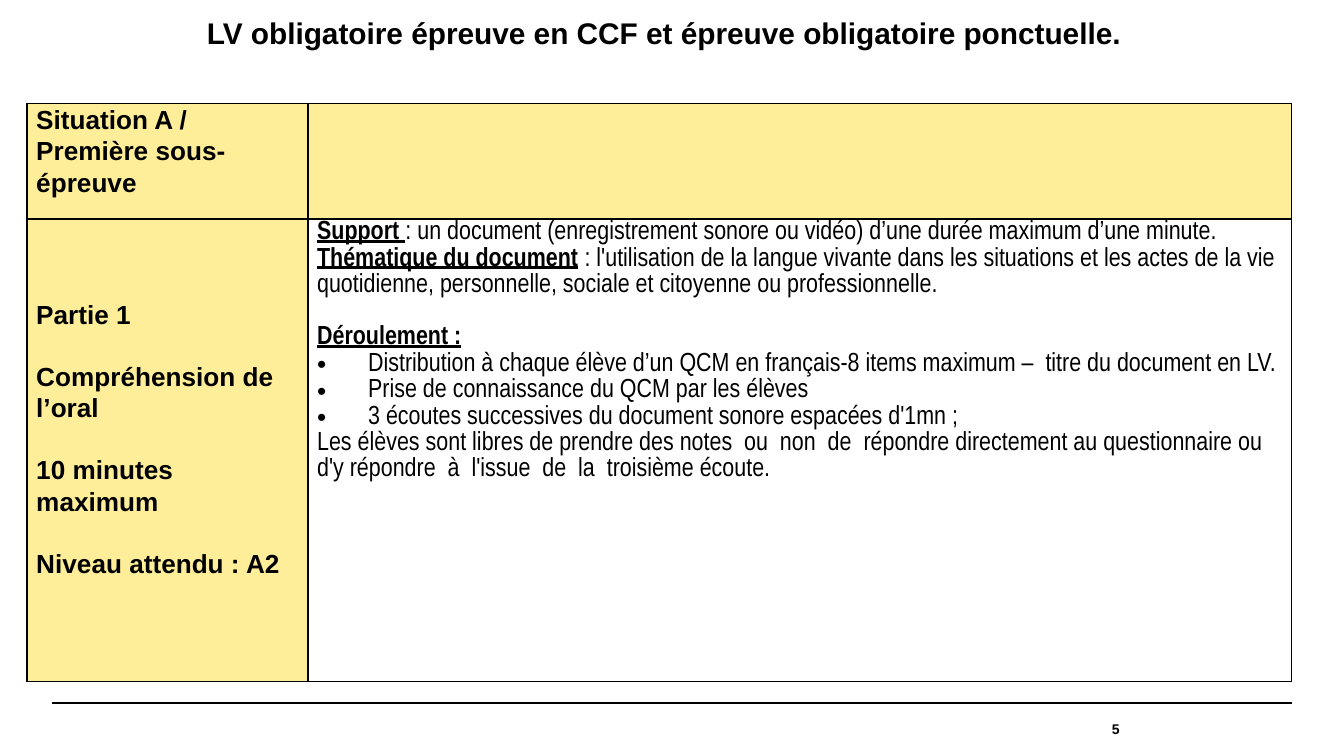
"""Build the slide on the first part of the oral comprehension exam."""
from pptx import Presentation
from pptx.dml.color import RGBColor as Rgb
from pptx.enum.shapes import MSO_CONNECTOR as Conn
from pptx.enum.text import MSO_ANCHOR as Anchor, PP_ALIGN as Align
from pptx.oxml.ns import qn
from pptx.util import Inches, Pt
from lxml.etree import SubElement as Sub

TITLE = "LV obligatoire épreuve en CCF et épreuve obligatoire ponctuelle."
INK, GOLD = "000000", "FFEE99"
WIDE = 10
COLS, ROWS = (2.09, 7.32), (0.86, 3.44)
HEAD = ["Situation A /", "Première sous-épreuve"]
PART = ["Partie 1", "Compréhension de l’oral", "10 minutes maximum", "Niveau attendu : A2"]
BODY = [
    ("Support ", ": un document (enregistrement sonore ou vidéo) d’une durée maximum d’une minute.", "", 0),
    ("Thématique du document", " : l'utilisation de la langue vivante dans les situations et les actes de la vie "
     "quotidienne, personnelle, sociale et citoyenne ou professionnelle.", "", 0),
    ("Déroulement :", "", "", 14),
    ("", "Distribution à chaque élève d’un QCM en français-8 items maximum –  titre du document en LV.", "•", 0),
    ("", "Prise de connaissance du QCM par les élèves", "•", 0),
    ("", "3 écoutes successives du document sonore espacées d'1mn ;", "•", 0),
    ("", "Les élèves sont libres de prendre des notes  ou  non  de  répondre directement au questionnaire ou "
     "d'y répondre  à  l'issue  de  la  troisième écoute.", "", 0),
]


def color(code):
    return Rgb.from_string(code)


def style(para, size, face="Arial", bold=True):
    font = para.font
    font.size, font.name, font.bold = Pt(size), face, bold
    font.color.rgb = color(INK)


def add_para(frame, first, gap=0):
    para = frame.paragraphs[0] if first else frame.add_paragraph()
    para.line_spacing = 1.07
    if gap and not first:
        para.space_before = Pt(gap)
    return para


def add_label(slide, box, text, size):
    frame = slide.shapes.add_textbox(*map(Inches, box)).text_frame
    frame.word_wrap = True
    frame.margin_left = frame.margin_right = frame.margin_top = frame.margin_bottom = 0
    para = frame.paragraphs[0]
    para.text = text
    style(para, size)
    return frame


def set_cell(cell, fill):
    cell.margin_left = cell.margin_right = Inches(0.07)
    cell.margin_top = cell.margin_bottom = 0
    props = cell._tc.get_or_add_tcPr()
    for side in ("lnL", "lnR", "lnT", "lnB"):
        line = Sub(props, qn("a:" + side), w=str(Pt(1)))
        Sub(Sub(line, qn("a:solidFill")), qn("a:srgbClr"), val=INK)
    if fill:
        cell.fill.solid()
        cell.fill.fore_color.rgb = color(fill)
    else:
        cell.fill.background()


def fill_list(cell, items, gap=0):
    for i, text in enumerate(items):
        para = add_para(cell.text_frame, i == 0, gap)
        para.text = text
        style(para, 14)


def fill_body(cell):
    for i, (lead, rest, mark, gap) in enumerate(BODY):
        para = add_para(cell.text_frame, i == 0, gap)
        if mark:
            props = para._p.get_or_add_pPr()
            props.set("marL", str(Inches(0.38)))
            props.set("indent", str(-Inches(0.38)))
            Sub(props, qn("a:buFont"), typeface="Arial")
            Sub(props, qn("a:buChar"), char=mark)
        style(para, 14, "Arial Narrow", not rest)
        for text, strong in ((lead, True), (rest, False)):
            if text:
                run = para.add_run()
                run.text = text
                run.font.bold = run.font.underline = strong


def main():
    deck = Presentation()
    deck.slide_width, deck.slide_height = Inches(WIDE), Inches(WIDE * 9 / 16)
    slide = deck.slides.add_slide(deck.slide_layouts[6])

    rule = slide.shapes.add_connector(Conn.STRAIGHT, *map(Inches, (0.39, 5.23, 9.61, 5.23)))
    rule.line.color.rgb = color(INK)
    rule.line.width = Pt(0.8)
    Sub(rule._element.spPr, qn("a:effectLst"))

    title = add_label(slide, (1.54, 0.14, 8.07, 0.24), TITLE, 16)
    title.paragraphs[0].line_spacing = 0.9
    page = add_label(slide, (6.85, 5.23, 1.48, 0.39), "5", 7.5)
    page.vertical_anchor = Anchor.MIDDLE
    page.paragraphs[0].alignment = Align.RIGHT

    box = (0.2, 0.77, sum(COLS), sum(ROWS))
    table = slide.shapes.add_table(2, 2, *map(Inches, box)).table
    table.first_row = table.horz_banding = False
    for col, width in zip(table.columns, COLS):
        col.width = Inches(width)
    for row, height in zip(table.rows, ROWS):
        row.height = Inches(height)
    for cell, fill in zip(table.iter_cells(), (GOLD, GOLD, GOLD, None)):
        set_cell(cell, fill)
    fill_list(table.cell(0, 0), HEAD)
    fill_list(table.cell(1, 0), PART, 16.5)
    table.cell(1, 0).margin_top = Inches(0.59)
    fill_body(table.cell(1, 1))
    deck.save("out.pptx")


if __name__ == "__main__":
    main()
